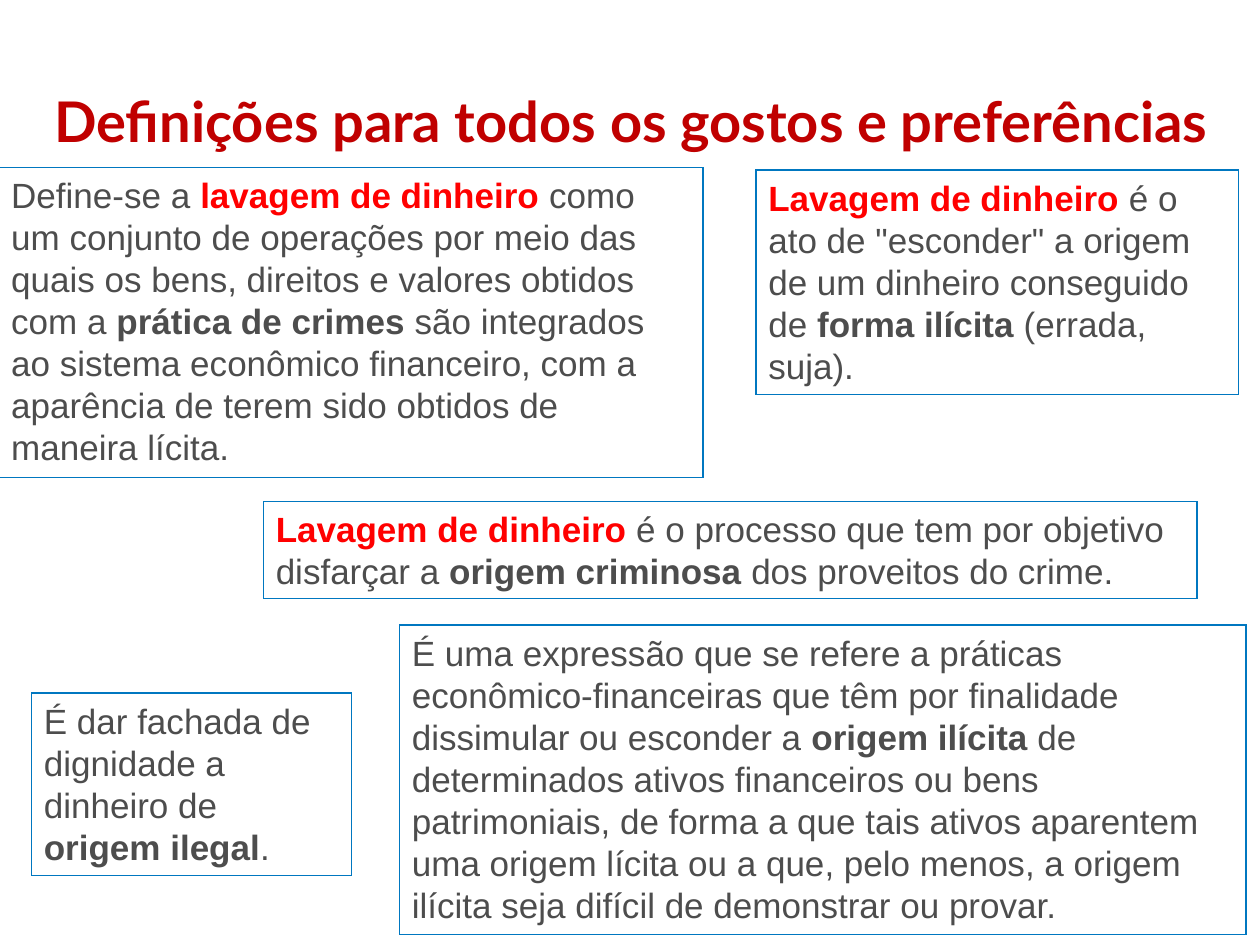
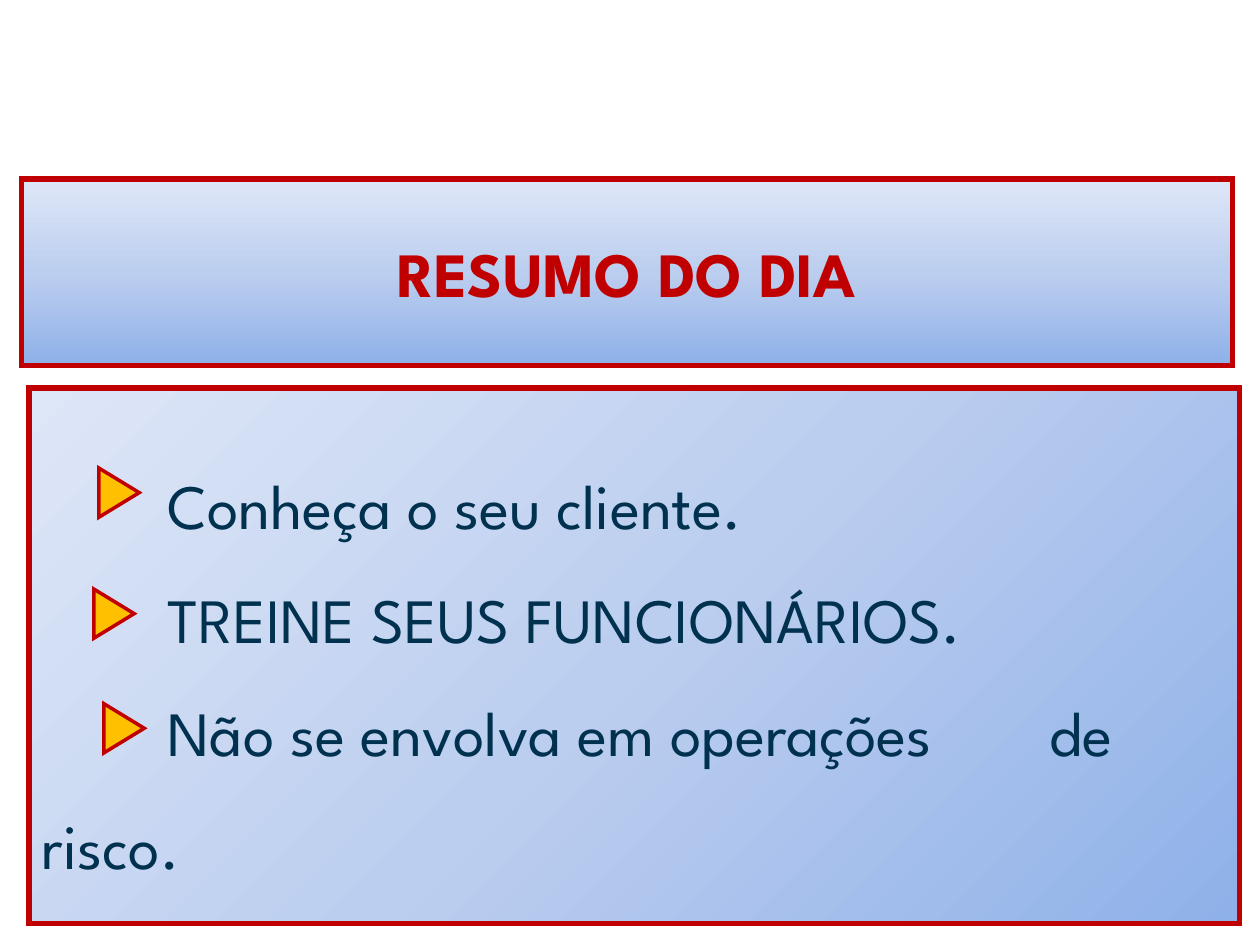
from pptx import Presentation
from pptx.dml.color import RGBColor
from pptx.enum.shapes import MSO_SHAPE
from pptx.enum.text import MSO_ANCHOR, MSO_AUTO_SIZE, PP_ALIGN
from pptx.oxml import parse_xml
from pptx.oxml.ns import nsdecls, qn
from pptx.util import Inches, Pt

COLORS = {"crimson": "C00000", "red": "FF0000", "gray": "4D4D4D", "blue": "0077C0",
          "navy": "00314F", "gold": "FFC000"}
STOPS = [(0, "8FB1E9"), (50, "BCCEEF"), (100, "DEE7F7")]
UPWARD = '<a:lin %s ang="16200000" scaled="1"/>'
CORNER = '<a:path %s path="circle"><a:fillToRect l="100000" t="100000"/></a:path>'

HEADING = "Definições para todos os gostos e preferências"
TERM = "lavagem de dinheiro"
# Place, then text with bold parts between asterisks
NOTES = [
    ((-0.01, 1.33, 5.59, 2.46),
     "Define-se a *lavagem de dinheiro* como um conjunto de operações por meio das quais "
     "os bens, direitos e valores obtidos com a *prática de crimes* são integrados ao "
     "sistema econômico financeiro, com a aparência de terem sido obtidos de maneira lícita."),
    ((3.17, 4.96, 6.72, 2.46),
     "É uma expressão que se refere a práticas econômico-financeiras que têm por finalidade "
     "dissimular ou esconder a *origem ilícita* de determinados ativos financeiros ou bens "
     "patrimoniais, de forma a que tais ativos aparentem uma origem lícita ou a que, pelo "
     "menos, a origem ilícita seja difícil de demonstrar ou provar."),
    ((2.09, 3.98, 7.41, 0.77),
     "*Lavagem de dinheiro* é o processo que tem por objetivo disfarçar a "
     "*origem criminosa* dos proveitos do crime."),
    ((6, 1.35, 3.83, 1.78),
     '*Lavagem de dinheiro* é o ato de "esconder" a origem de um dinheiro conseguido de '
     "*forma ilícita* (errada, suja)."),
    ((0.25, 5.5, 2.54, 1.45),
     "É dar fachada de dignidade a dinheiro de *origem ilegal*."),
]
BANNER = "RESUMO DO DIA"
ADVICE = ["\tConheça o seu cliente.", "\tTREINE SEUS FUNCIONÁRIOS.",
          "\tNão se envolva em operações \tde risco."]
TABS = [1, 8]
MARKS = [(0.75, 3.75), (0.71, 4.71), (0.79, 5.62)]


def rgb(name):
    return RGBColor.from_string(COLORS[name])


def style(run, face, size, color, bold=False):
    font = run.font
    font.name, font.size, font.bold = face, Pt(size), bold
    font.color.rgb = rgb(color)


def place(shape, box):
    shape.left, shape.top, shape.width, shape.height = map(Inches, box)


def outline(shape, color, width):
    """Draw a solid line with sharp corners."""
    shape.line.color.rgb = rgb(color)
    shape.line.width = Pt(width)
    edge = shape.line._get_or_add_ln()
    edge.append(parse_xml(f'<a:miter {nsdecls("a")} lim="800000"/>'))


def add_shape(slide, kind, box, color, width):
    shape = slide.shapes.add_shape(kind, *map(Inches, box))
    shape.shadow.inherit = False
    outline(shape, color, width)
    return shape


def shade(shape, course):
    """Fill with the shared blue gradient along the given course."""
    shape.fill.gradient()
    grad = shape.fill._xPr.find(qn("a:gradFill"))
    for child in list(grad):
        grad.remove(child)
    stops = "".join(f'<a:gs pos="{pos * 1000}"><a:srgbClr val="{color}"/></a:gs>'
                    for pos, color in STOPS)
    grad.append(parse_xml(f'<a:gsLst {nsdecls("a")}>{stops}</a:gsLst>'))
    grad.append(parse_xml(course % nsdecls("a")))


def set_tabs(para, places):
    stops = "".join(f'<a:tab pos="{Inches(x)}" algn="l"/>' for x in places)
    para._p.get_or_add_pPr().append(
        parse_xml(f'<a:tabLst {nsdecls("a")}>{stops}</a:tabLst>'))


def set_text(shape, text, anchor, align, face, size, color, bold=False):
    frame = shape.text_frame
    frame.word_wrap, frame.auto_size = True, MSO_AUTO_SIZE.NONE
    frame.vertical_anchor = anchor
    para = frame.paragraphs[0]
    para.text, para.alignment = text, align
    for run in para.runs:
        style(run, face, size, color, bold)
    return para


def add_note(slide, box, text):
    note = add_shape(slide, MSO_SHAPE.RECTANGLE, box, "blue", 0.75)
    note.fill.background()
    frame = note.text_frame
    frame.word_wrap, frame.auto_size = True, MSO_AUTO_SIZE.SHAPE_TO_FIT_TEXT
    frame.vertical_anchor = MSO_ANCHOR.TOP
    para = frame.paragraphs[0]
    para.alignment = PP_ALIGN.LEFT
    for i, part in enumerate(text.split("*")):
        if part:
            run = para.add_run()
            run.text = part
            color = "red" if part.lower() == TERM else "gray"
            style(run, "Arial", 20, color, i % 2 == 1)


def add_terms(deck):
    slide = deck.slides.add_slide(deck.slide_layouts[5])
    title = slide.shapes.title
    place(title, (0.33, 0.64, 9.67, 0.94))
    set_text(title, HEADING, MSO_ANCHOR.TOP, PP_ALIGN.LEFT, "Lato", 32, "crimson", True)
    for box, text in NOTES:
        add_note(slide, box, text)


def add_recap(deck):
    slide = deck.slides.add_slide(deck.slide_layouts[5])
    panel = slide.shapes.title
    place(panel, (0.23, 3.08, 9.61, 4.25))
    shade(panel, CORNER)
    outline(panel, "crimson", 3)
    para = set_text(panel, "\v".join(ADVICE), MSO_ANCHOR.MIDDLE, PP_ALIGN.LEFT,
                    "League Spartan", 36, "navy")
    set_tabs(para, TABS)
    para.line_spacing = 1.5

    banner = add_shape(slide, MSO_SHAPE.RECTANGLE, (0.17, 1.42, 9.61, 1.48), "crimson", 3)
    shade(banner, UPWARD)
    set_text(banner, BANNER, MSO_ANCHOR.MIDDLE, PP_ALIGN.CENTER,
             "League Spartan", 36, "crimson", True)

    for left, top in MARKS:
        mark = add_shape(slide, MSO_SHAPE.ISOSCELES_TRIANGLE, (left, top, 0.39, 0.32),
                         "crimson", 2)
        mark.rotation = 90
        mark.fill.solid()
        mark.fill.fore_color.rgb = rgb("gold")


def main():
    deck = Presentation()
    deck.slide_width, deck.slide_height = Inches(10), Inches(7.5)
    add_terms(deck)
    add_recap(deck)
    deck.save("out.pptx")


if __name__ == "__main__":
    main()
